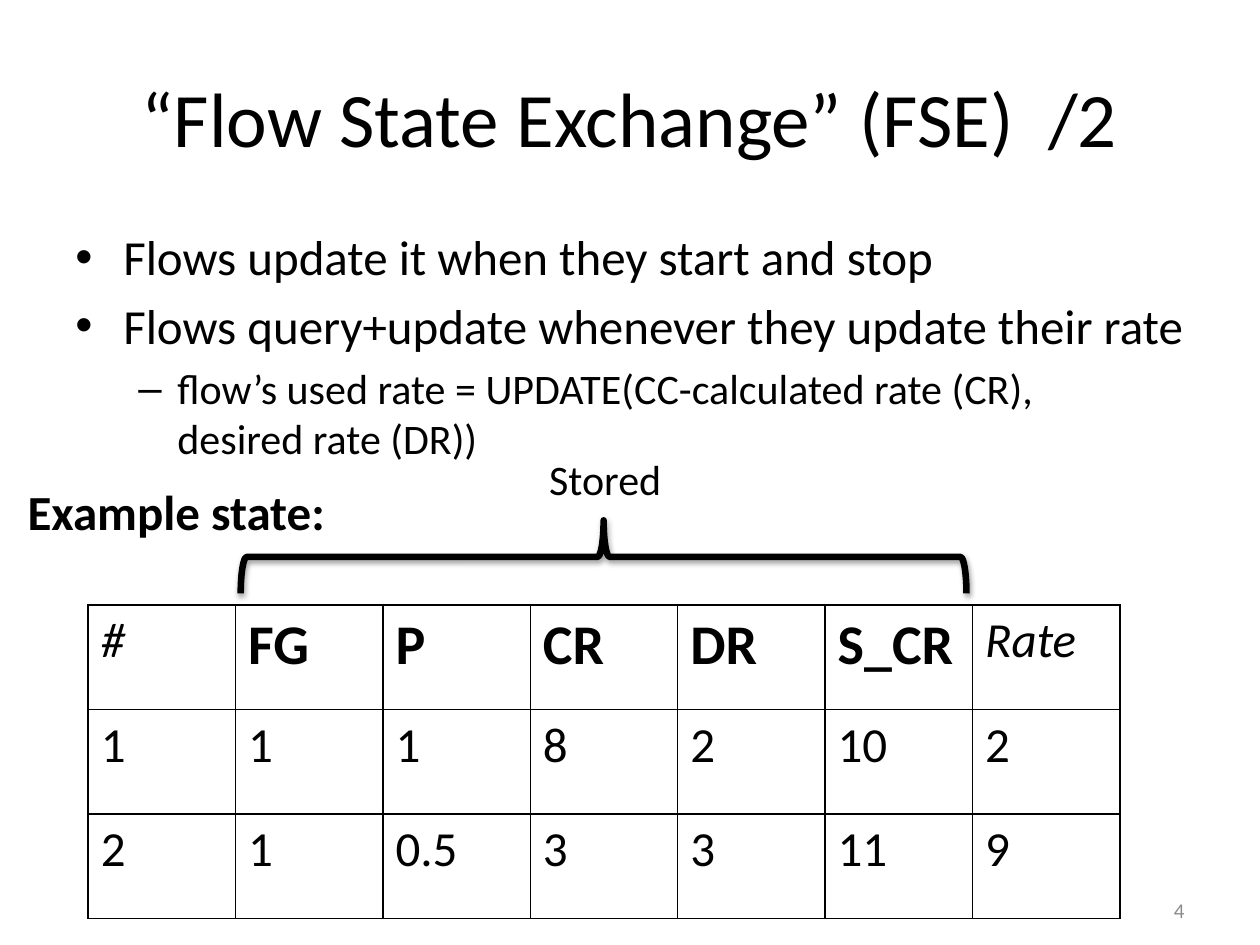
"""Build the second Flow State Exchange slide with its example state table."""
from dataclasses import dataclass

from lxml.etree import SubElement
from pptx import Presentation
from pptx.dml.color import RGBColor
from pptx.enum.shapes import MSO_SHAPE as Shape
from pptx.enum.text import MSO_ANCHOR as Anchor, PP_ALIGN as Align
from pptx.oxml import parse_xml
from pptx.oxml.ns import nsdecls, qn
from pptx.util import Inches, Pt


@dataclass(frozen=True)
class Theme:
    font: str = "Calibri"
    ink: str = "000000"
    muted: str = "8C8C8C"
    title: int = 44
    header: int = 32
    body: int = 28
    detail: int = 24
    footer: int = 12


THEME = Theme()


@dataclass(frozen=True)
class Style:
    size: int
    color: str = THEME.ink
    bold: bool = False
    italic: bool = False


@dataclass(frozen=True)
class Label:
    text: str
    left: float
    top: float
    width: float
    height: float
    style: Style
    align: Align = Align.LEFT
    anchor: Anchor = Anchor.TOP
    wrap: bool = True


@dataclass(frozen=True)
class Bullet:
    text: str
    size: int
    mark: str
    indent: float
    hanging: float
    level: int = 0


PLAIN = Style(THEME.body)
KEY = Style(THEME.header, bold=True)
DERIVED = Style(THEME.body, italic=True)

LABELS = [
    Label("“Flow State Exchange” (FSE)  /2", 0.5, 0.3, 9, 1.25,
          Style(THEME.title), Align.CENTER, Anchor.MIDDLE),
    Label("4", 7.17, 7.02, 2.33, 0.4, Style(THEME.footer, THEME.muted),
          Align.RIGHT, Anchor.MIDDLE),
    Label("Stored", 4.26, 3.55, 1.11, 0.5, Style(THEME.detail), wrap=False),
    Label("Example state:", 0.12, 3.77, 2.61, 0.57,
          Style(THEME.body, bold=True), wrap=False),
]
BULLETS = [
    Bullet("Flows update it when they start and stop", THEME.body, "•", 0.38, 0.38),
    Bullet("Flows query+update whenever they update their rate",
           THEME.body, "•", 0.38, 0.38),
    Bullet("flow’s used rate = UPDATE(CC-calculated rate (CR),\vdesired rate (DR))",
           THEME.detail, "–", 0.81, 0.31, 1),
]
STATE = [
    ["#", "FG", "P", "CR", "DR", "S_CR", "Rate"],
    ["1", "1", "1", "8", "2", "10", "2"],
    ["2", "1", "0.5", "3", "3", "11", "9"],
]


def set_font(para, style: Style) -> None:
    """Apply a text style to a whole paragraph."""
    font = para.font
    font.name, font.size = THEME.font, Pt(style.size)
    font.bold, font.italic = style.bold, style.italic
    font.color.rgb = RGBColor.from_string(style.color)


def add_label(page, label: Label) -> None:
    """Draw a one-paragraph text box."""
    box = page.shapes.add_textbox(Inches(label.left), Inches(label.top),
                                  Inches(label.width), Inches(label.height))
    frame = box.text_frame
    frame.word_wrap, frame.vertical_anchor = label.wrap, label.anchor
    para = frame.paragraphs[0]
    para.text, para.alignment = label.text, label.align
    set_font(para, label.style)


def add_bullets(page, bullets: list[Bullet]) -> None:
    """Draw the bulleted body text."""
    box = page.shapes.add_textbox(Inches(0.5), Inches(1.75), Inches(9.15), Inches(4.95))
    frame = box.text_frame
    frame.word_wrap = True
    for index, bullet in enumerate(bullets):
        para = frame.add_paragraph() if index else frame.paragraphs[0]
        para.text, para.level = bullet.text, bullet.level
        props = para._p.get_or_add_pPr()
        props.set("marL", str(Inches(bullet.indent)))
        props.set("indent", str(-Inches(bullet.hanging)))
        SubElement(props, qn("a:buFont"), typeface="Arial")
        SubElement(props, qn("a:buChar"), char=bullet.mark)
        if index:
            para.space_before = Pt(bullet.size * 0.2)
        set_font(para, Style(bullet.size))


def add_borders(cell) -> None:
    """Give a cell thin lines on all four sides."""
    props = cell._tc.get_or_add_tcPr()
    for side in ("lnL", "lnR", "lnT", "lnB"):
        props.append(parse_xml(
            f'<a:{side} {nsdecls("a")} w="{Pt(1)}"><a:solidFill>'
            f'<a:srgbClr val="{THEME.ink}"/></a:solidFill></a:{side}>'))


def cell_style(row: int, column: int) -> Style:
    """Choose the style of a cell: stored columns have bold headings."""
    if row:
        return PLAIN
    return DERIVED if column in (0, len(STATE[0]) - 1) else KEY


def add_state_table(page) -> None:
    """Draw the example state table."""
    table = page.shapes.add_table(len(STATE), len(STATE[0]), Inches(0.7), Inches(4.8),
                                  Inches(8.19), Inches(2.49)).table
    table.first_row = table.horz_banding = False
    for row, values in enumerate(STATE):
        for column, value in enumerate(values):
            cell = table.cell(row, column)
            add_borders(cell)
            cell.fill.background()
            para = cell.text_frame.paragraphs[0]
            para.text = value
            set_font(para, cell_style(row, column))


def add_stored_brace(page) -> None:
    """Draw the shadowed brace over the stored columns."""
    brace = page.shapes.add_shape(Shape.LEFT_BRACE, Inches(4.5), Inches(1.54),
                                  Inches(0.58), Inches(5.76))
    brace.rotation = 90
    brace.fill.background()
    brace.line.color.rgb = RGBColor.from_string(THEME.ink)
    brace.line.width = Pt(3.75)
    brace.shadow.inherit = False
    effects = brace._element.spPr.find(qn("a:effectLst"))
    effects.append(parse_xml(
        f'<a:outerShdw {nsdecls("a")} blurRad="{Pt(3.1)}" dist="{Pt(1.6)}" '
        f'dir="5400000" rotWithShape="0"><a:srgbClr val="{THEME.ink}">'
        '<a:alpha val="38000"/></a:srgbClr></a:outerShdw>'))


def main() -> None:
    """Build and save the deck."""
    deck = Presentation()
    deck.slide_width, deck.slide_height = Inches(10), Inches(7.5)
    page = deck.slides.add_slide(deck.slide_layouts[6])
    add_bullets(page, BULLETS)
    add_state_table(page)
    add_stored_brace(page)
    for label in LABELS:
        add_label(page, label)
    deck.save("out.pptx")


if __name__ == "__main__":
    main()
